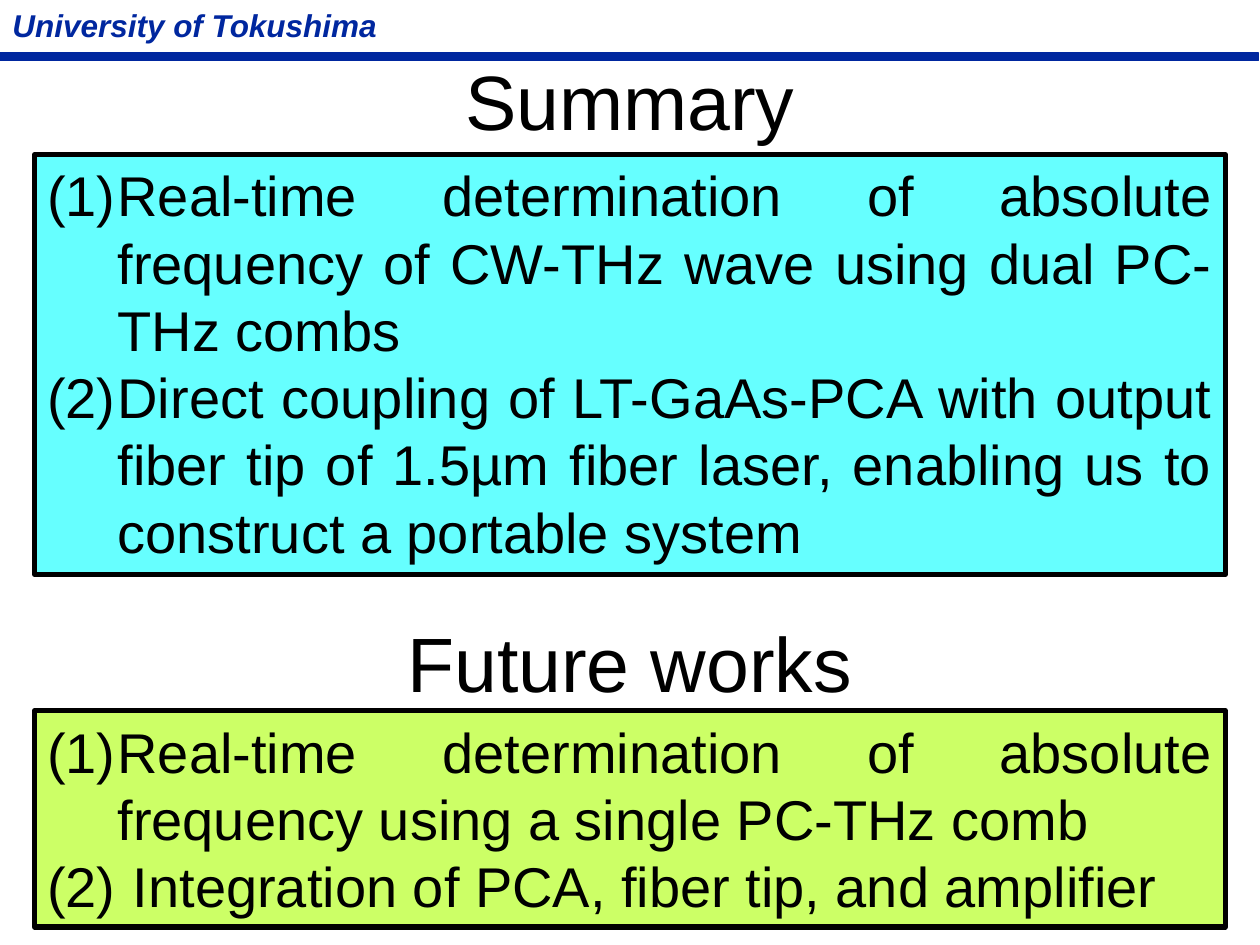
from lxml import etree
from pptx import Presentation
from pptx.dml.color import RGBColor
from pptx.enum.shapes import MSO_SHAPE
from pptx.enum.text import MSO_ANCHOR, PP_ALIGN
from pptx.oxml.ns import qn
from pptx.util import Cm, Pt

RECTANGLE = MSO_SHAPE.RECTANGLE
TOP, MIDDLE = MSO_ANCHOR.TOP, MSO_ANCHOR.MIDDLE
LEFT, CENTER, JUSTIFY = PP_ALIGN.LEFT, PP_ALIGN.CENTER, PP_ALIGN.JUSTIFY

COLORS = {"navy": "00279F", "black": "000000", "cyan": "66FFFF", "lime": "CCFF66"}
FONT = "Arial"
NUMBER_INDENT = 1.42

SUMMARY = [
    ("Real-time determination of absolute frequency of CW-THz wave "
     "using dual PC-THz combs", NUMBER_INDENT),
    ("Direct coupling of LT-GaAs-PCA with output fiber tip of 1.5µm fiber laser, "
     "enabling us to construct a portable system", NUMBER_INDENT),
]
FUTURE_WORKS = [
    ("Real-time determination of absolute frequency using a single PC-THz comb",
     NUMBER_INDENT),
    ("Integration of PCA, fiber tip, and amplifier", NUMBER_INDENT + 0.31),
]


def color(name):
    return RGBColor.from_string(COLORS[name])


def place(shape, box):
    shape.left, shape.top, shape.width, shape.height = (Cm(v) for v in box)


def write(paragraph, text, size=32, ink="black", align=LEFT, bold=False,
          italic=False, number_indent=None):
    if number_indent:
        properties = paragraph._p.get_or_add_pPr()
        properties.set("marL", str(Cm(number_indent)))
        properties.set("indent", str(-Cm(number_indent)))
        etree.SubElement(properties, qn("a:buFont"), typeface="+mj-lt")
        etree.SubElement(properties, qn("a:buAutoNum"), type="arabicParenBoth")
    paragraph.alignment = align
    run = paragraph.add_run()
    run.text = text
    font = run.font
    font.name, font.size, font.bold, font.italic = FONT, Pt(size), bold, italic
    font.color.rgb = color(ink)


def add_panel(slide, box, fill, outline, weight):
    panel = slide.shapes.add_shape(RECTANGLE, *(Cm(v) for v in box))
    panel.shadow.inherit = False
    panel.fill.solid()
    panel.fill.fore_color.rgb = color(fill)
    panel.line.color.rgb = color(outline)
    panel.line.width = Pt(weight)
    return panel


def add_header(slide, box):
    left, top, width, height = box
    add_panel(slide, (left, top + 1.07, width, height - 1.07), "navy", "navy", 1)
    affiliation = slide.shapes.add_textbox(Cm(left), Cm(top), Cm(7.92), Cm(1.02))
    affiliation.text_frame.word_wrap = False
    write(affiliation.text_frame.paragraphs[0], "University of Tokushima",
          size=18, ink="navy", bold=True, italic=True)


def format_heading(heading, box, text):
    place(heading, box)
    frame = heading.text_frame
    frame.word_wrap = True
    frame.vertical_anchor = MIDDLE
    write(frame.paragraphs[0], text, size=44, align=CENTER)


def add_numbered_panel(slide, box, items, fill):
    frame = add_panel(slide, box, fill, "black", 3).text_frame
    frame.word_wrap = True
    frame.vertical_anchor = TOP
    for index, (text, indent) in enumerate(items):
        paragraph = frame.add_paragraph() if index else frame.paragraphs[0]
        write(paragraph, text, align=JUSTIFY, number_indent=indent)


def main():
    presentation = Presentation()
    presentation.slide_width, presentation.slide_height = Cm(25.4), Cm(19.05)
    slide = presentation.slides.add_slide(presentation.slide_layouts[5])

    add_header(slide, (0, 0, 25.37, 1.22))
    format_heading(slide.shapes.title, (1.9, 0.9, 21.6, 2.22), "Summary")
    add_numbered_panel(slide, (0.7, 3.12, 24, 8.46), SUMMARY, "cyan")
    future_heading = slide.shapes.add_textbox(0, 0, 0, 0)
    format_heading(future_heading, (1.9, 12.23, 21.6, 2.22), "Future works")
    add_numbered_panel(slide, (0.7, 14.33, 24, 4.36), FUTURE_WORKS, "lime")

    presentation.save("out.pptx")


if __name__ == "__main__":
    main()
